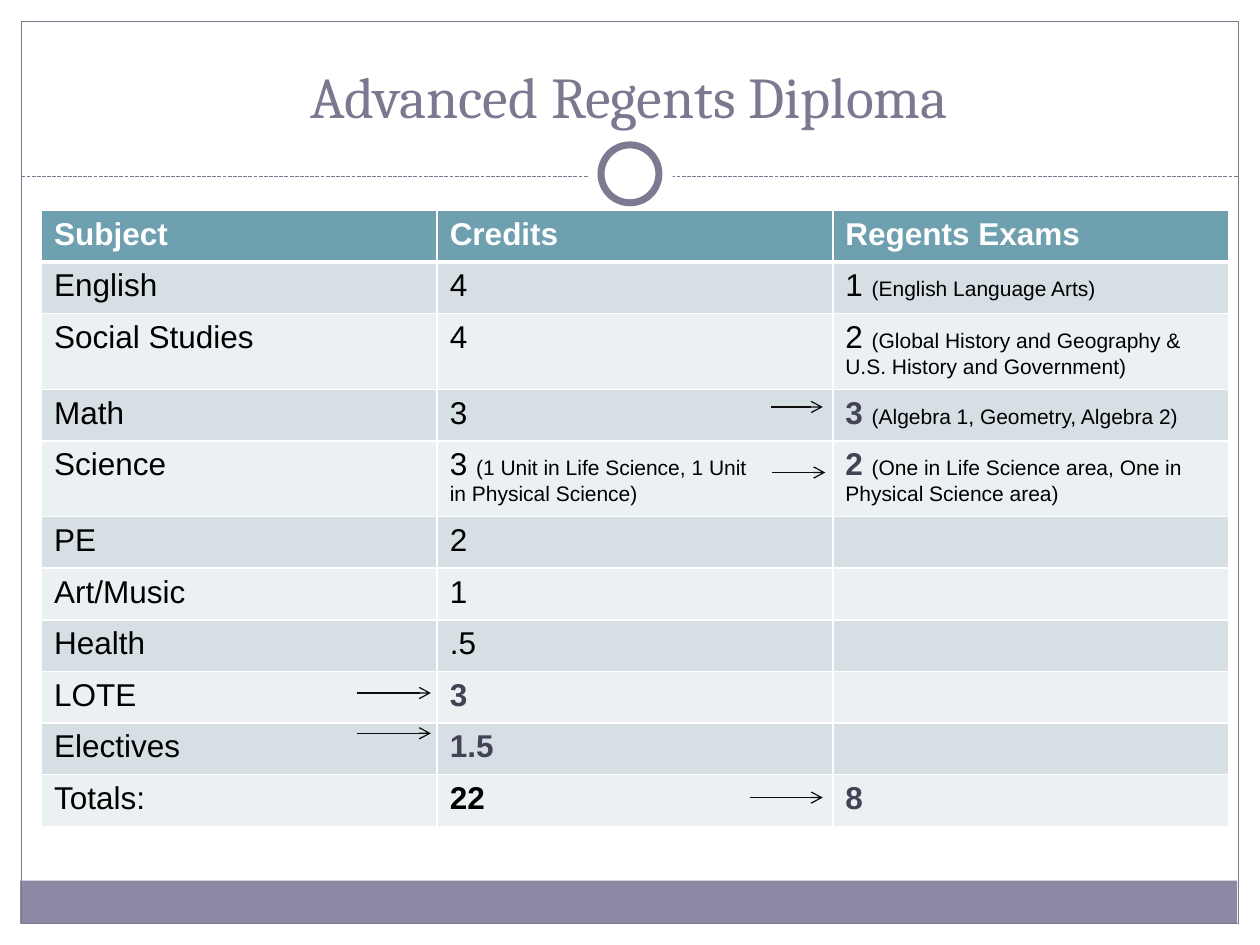
from dataclasses import dataclass

from lxml.etree import SubElement
from pptx import Presentation
from pptx.dml.color import RGBColor
from pptx.enum.dml import MSO_LINE
from pptx.enum.shapes import MSO_CONNECTOR, MSO_SHAPE
from pptx.enum.text import MSO_ANCHOR, MSO_AUTO_SIZE, PP_ALIGN
from pptx.oxml.ns import qn
from pptx.util import Inches, Pt

WHITE, BLACK, ARROW = "FFFFFF", "000000", "0D0D0D"
FRAME, FOOTER, TITLE = "7C7991", "8D89A4", "7B7890"
HEADER, BANDS, ACCENT = "6EA0B0", ("EBF0F2", "D5DFE4"), "444255"


@dataclass
class Entry:
    lead: str = ""
    note: str = ""
    color: str = BLACK
    bold: bool = False


def strong(lead, note=""):
    return Entry(lead, note, ACCENT, True)


def heading(lead):
    return Entry(lead, "", WHITE, True)


ROWS = [
    [heading("Subject"), heading("Credits"), heading("Regents Exams")],
    [Entry("English"), Entry("4"), Entry("1 ", "(English Language Arts)")],
    [Entry("Social Studies"), Entry("4"),
     Entry("2 ", "(Global History and Geography & U.S. History and Government)")],
    [Entry("Math"), Entry("3"), strong("3 ", "(Algebra 1, Geometry, Algebra 2)")],
    [Entry("Science"), Entry("3 ", "(1 Unit in Life Science, 1 Unit\nin Physical Science)"),
     strong("2 ", "(One in Life Science area, One in Physical Science area)")],
    [Entry("PE"), Entry("2"), Entry()],
    [Entry("Art/Music"), Entry("1"), Entry()],
    [Entry("Health"), Entry(".5"), Entry()],
    [Entry("LOTE"), strong("3"), Entry()],
    [Entry("Electives"), strong("1.5"), Entry()],
    [Entry("Totals:"), Entry("22", bold=True), strong("8")],
]
TALL_ROWS = (2, 4)
ARROWS = [(2.83, 3.42, 5.5), (2.83, 3.42, 5.82), (5.95, 6.53, 6.33),
          (6.12, 6.53, 3.23), (6.13, 6.55, 3.75)]


def rgb(value):
    return RGBColor.from_string(value)


class SlideBuilder:
    font = "Arial"
    title_font = "Cambria"
    size = 18
    note_size = 12

    def __init__(self, deck):
        self.slide = deck.slides.add_slide(deck.slide_layouts[5])

    def style(self, font, size, color, bold=False, name=None):
        font.name = name or self.font
        font.size = Pt(size)
        font.bold = bold
        font.color.rgb = rgb(color)

    def title(self, text, left, top, width, height):
        box = self.slide.shapes.title
        box.left, box.top = Inches(left), Inches(top)
        box.width, box.height = Inches(width), Inches(height)
        frame = box.text_frame
        frame.text = text
        frame.word_wrap = True
        frame.auto_size = MSO_AUTO_SIZE.NONE
        frame.vertical_anchor = MSO_ANCHOR.BOTTOM
        para = frame.paragraphs[0]
        para.alignment = PP_ALIGN.CENTER
        self.style(para.font, 33, TITLE, name=self.title_font)

    def shape(self, kind, left, top, width, height, fill=None, line=None, weight=0.75):
        shape = self.slide.shapes.add_shape(
            kind, Inches(left), Inches(top), Inches(width), Inches(height))
        shape.shadow.inherit = False
        if fill:
            shape.fill.solid()
            shape.fill.fore_color.rgb = rgb(fill)
        else:
            shape.fill.background()
        if line:
            shape.line.color.rgb = rgb(line)
            shape.line.width = Pt(weight)
        else:
            shape.line.fill.background()

    def line(self, start, end, y, color, dash=None, arrow=False):
        line = self.slide.shapes.add_connector(
            MSO_CONNECTOR.STRAIGHT, Inches(start), Inches(y), Inches(end), Inches(y))
        line.line.color.rgb = rgb(color)
        line.line.width = Pt(0.75)
        if dash:
            line.line.dash_style = dash
        properties = line._element.spPr
        if arrow:
            SubElement(properties.find(qn("a:ln")), qn("a:tailEnd"), type="arrow")
        SubElement(properties, qn("a:effectLst"))

    def borders(self, cell, top, bottom):
        properties = cell._tc.get_or_add_tcPr()
        for side, weight in (("L", 1), ("R", 1), ("T", top), ("B", bottom)):
            border = SubElement(properties, qn(f"a:ln{side}"), w=str(Pt(weight)))
            fill = SubElement(border, qn("a:solidFill"))
            SubElement(fill, qn("a:srgbClr"), val=WHITE)

    def cell(self, cell, entry, fill):
        cell.fill.solid()
        cell.fill.fore_color.rgb = rgb(fill)
        frame = cell.text_frame
        for index, note in enumerate(entry.note.split("\n")):
            para = frame.add_paragraph() if index else frame.paragraphs[0]
            lead = "" if index else entry.lead
            self.style(para.font, self.size, entry.color, entry.bold)
            if lead:
                span = para.add_run()
                span.text = lead
                self.style(span.font, self.size, entry.color, entry.bold)
            if note:
                span = para.add_run()
                span.text = note
                self.style(span.font, self.note_size, BLACK)

    def table(self, rows, left, top, column_width, row_height, tall_height):
        columns = len(rows[0])
        heights = [tall_height if index in TALL_ROWS else row_height
                   for index in range(len(rows))]
        table = self.slide.shapes.add_table(
            len(rows), columns, Inches(left), Inches(top),
            Inches(column_width * columns), Inches(sum(heights))).table
        table.horz_banding = False
        for column in table.columns:
            column.width = Inches(column_width)
        for index, entries in enumerate(rows):
            table.rows[index].height = Inches(heights[index])
            fill = BANDS[index % 2] if index else HEADER
            for column, entry in enumerate(entries):
                cell = table.cell(index, column)
                self.borders(cell, 3 if index == 1 else 1, 1 if index else 3)
                self.cell(cell, entry, fill)


def main():
    deck = Presentation()
    deck.slide_width, deck.slide_height = Inches(10), Inches(7.5)
    page = SlideBuilder(deck)
    page.shape(MSO_SHAPE.RECTANGLE, 0.16, 6.99, 9.66, 0.34, fill=FOOTER)
    page.shape(MSO_SHAPE.RECTANGLE, 0.17, 0.17, 9.66, 7.16, line=FRAME)
    page.line(0.17, 9.83, 1.4, FRAME, dash=MSO_LINE.SQUARE_DOT)
    page.shape(MSO_SHAPE.OVAL, 4.67, 1.05, 0.67, 0.67, fill=WHITE)
    page.shape(MSO_SHAPE.OVAL, 4.77, 1.15, 0.46, 0.46, fill=WHITE, line=FRAME, weight=4)
    page.title("Advanced Regents Diploma", 0.33, 0.25, 9.33, 0.83)
    page.table(ROWS, 0.33, 1.67, 3.14, 0.41, 0.6)
    for start, end, y in ARROWS:
        page.line(start, end, y, ARROW, arrow=True)
    deck.save("out.pptx")


if __name__ == "__main__":
    main()
